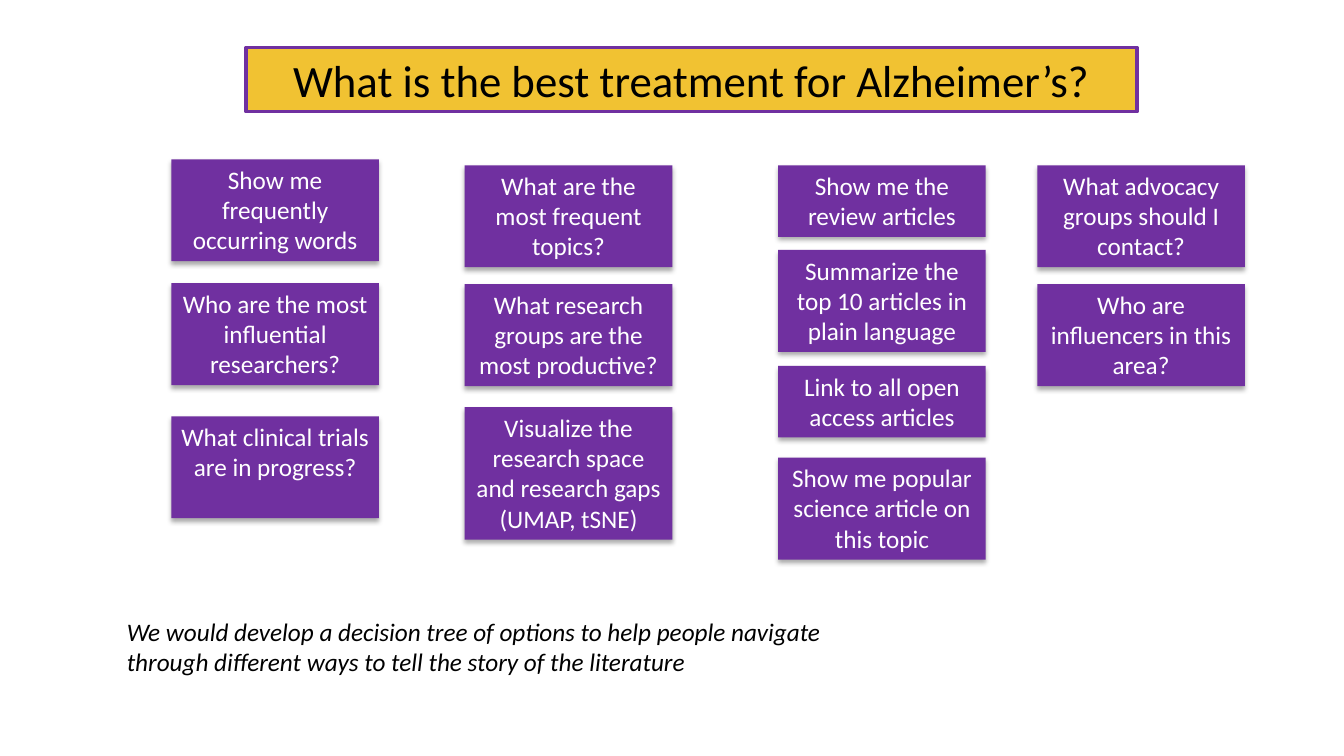
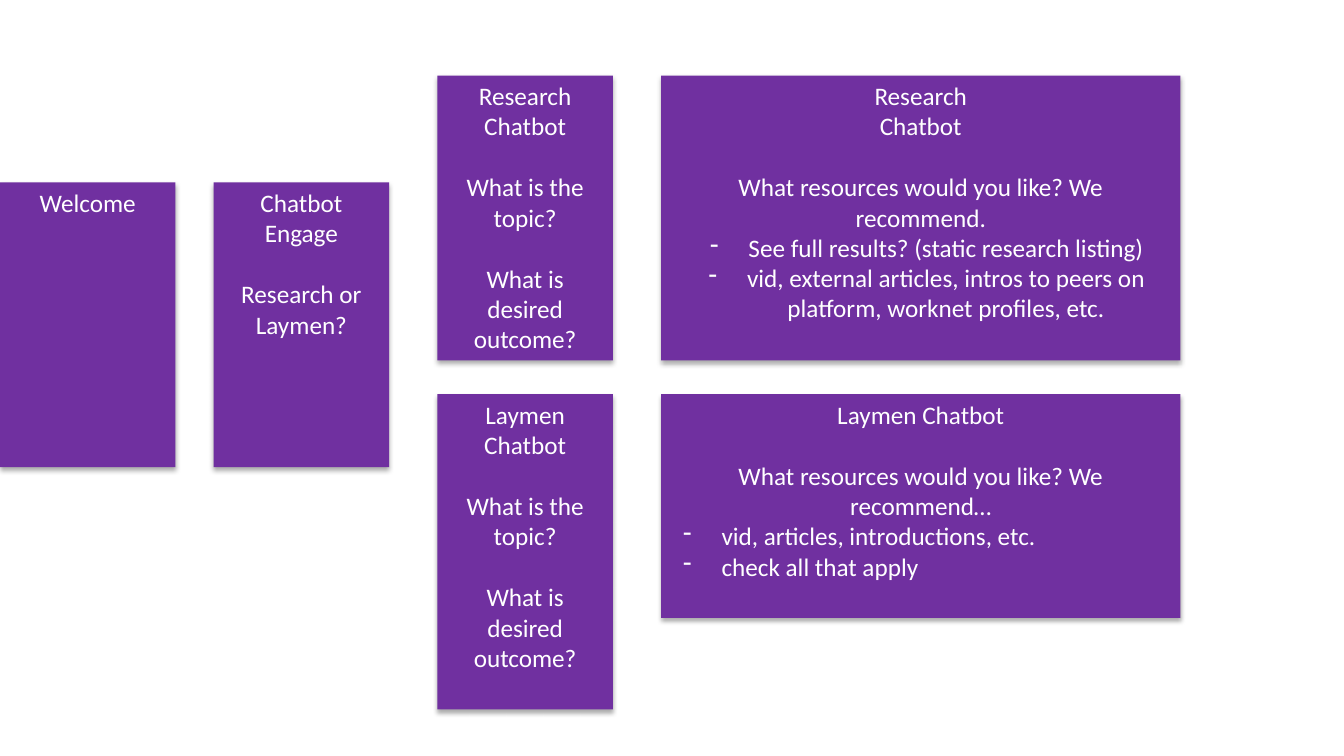
from dataclasses import dataclass, field

from lxml.etree import SubElement
from pptx import Presentation
from pptx.dml.color import RGBColor
from pptx.enum.shapes import MSO_SHAPE
from pptx.enum.text import MSO_ANCHOR, MSO_AUTO_SIZE, PP_ALIGN
from pptx.oxml.ns import qn
from pptx.util import Inches, Pt


@dataclass
class Theme:
    plum: RGBColor = RGBColor(0x70, 0x30, 0xA0)
    gold: RGBColor = RGBColor(0xF1, 0xC2, 0x32)
    ink: RGBColor = RGBColor(0, 0, 0)
    paper: RGBColor = RGBColor(255, 255, 255)
    edge: int = Pt(2.25)
    line: float = 4.03
    pad: float = 1.4
    head: dict = field(default_factory=lambda: {"name": "Calibri", "size": Pt(32)})
    text: dict = field(default_factory=lambda: {"name": "Calibri", "size": Pt(18)})
    frame: dict = field(default_factory=lambda: {
        "word_wrap": True, "auto_size": MSO_AUTO_SIZE.NONE,
        "vertical_anchor": MSO_ANCHOR.TOP,
        "margin_left": Inches(0.1), "margin_right": Inches(0.1),
        "margin_top": Inches(0.05), "margin_bottom": Inches(0.05)})


THEME = Theme()
WIDTH, HEIGHT = Inches(13.333), Inches(7.5)
MID = {"alignment": PP_ALIGN.CENTER, "space_before": Pt(0)}
GAP = MID | {"space_before": Pt(22)}
LEFT = MID | {"alignment": PP_ALIGN.LEFT}


def apply(item, form):
    for name, value in form.items():
        setattr(item, name, value)


def area(x, y, w, h):
    return [round(size * part / 100)
            for size, part in zip((WIDTH, HEIGHT, WIDTH, HEIGHT), (x, y, w, h))]


def tall(lines):
    return lines * THEME.line + THEME.pad


def dash(para):
    props = para._p.get_or_add_pPr()
    props.set("marL", str(Inches(0.5)))
    props.set("indent", str(Inches(-0.38)))
    tint = SubElement(props, qn("a:buClr"))
    SubElement(tint, qn("a:srgbClr"), val=str(THEME.paper))
    SubElement(props, qn("a:buChar"), char="-")


def write(shape, rows, font, color, **frame):
    body = shape.text_frame
    apply(body, THEME.frame | frame)
    for spot, (text, form, mark) in enumerate(rows):
        para = body.add_paragraph() if spot else body.paragraphs[0]
        apply(para, form)
        if mark:
            dash(para)
        run = para.add_run()
        run.text = text
        apply(run.font, font)
        run.font.color.rgb = color


def shade(shape):
    shape.shadow.inherit = False
    cast = SubElement(shape._element.spPr.find(qn("a:effectLst")), qn("a:outerShdw"),
                      blurRad=str(Pt(3.5)), dist=str(Pt(2.2)), dir="5400000",
                      rotWithShape="0")
    tint = SubElement(cast, qn("a:srgbClr"), val=str(THEME.ink))
    SubElement(tint, qn("a:alpha"), val="32000")


def card(slide, x, y, w, lines, rows):
    shape = slide.shapes.add_shape(MSO_SHAPE.RECTANGLE, *area(x, y, w, tall(lines)))
    shape.fill.solid()
    shape.fill.fore_color.rgb = THEME.plum
    shape.line.fill.background()
    shade(shape)
    write(shape, rows, THEME.text, THEME.paper)


def title(slide, text, *box):
    shape = slide.shapes.title
    apply(shape, dict(zip(("left", "top", "width", "height"), area(*box))))
    shape.fill.solid()
    shape.fill.fore_color.rgb = THEME.gold
    shape.line.color.rgb = THEME.plum
    shape.line.width = THEME.edge
    write(shape, [(text, MID, False)], THEME.head, THEME.ink)


def note(slide, text, *box):
    shape = slide.shapes.add_textbox(*area(*box))
    write(shape, [(text, LEFT, False)], THEME.text | {"italic": True}, THEME.ink,
          margin_top=Inches(0.1), margin_bottom=Inches(0.1))


def asks(deck):
    slide = deck.slides.add_slide(deck.slide_layouts[5])
    title(slide, "What is the best treatment for Alzheimer’s?", 18.3, 6.27, 66.3, 8.53)
    stacks = {
        12.75: [(21.07, 3, "Show me frequently occurring words"),
                (37.47, 3, "Who are the most influential researchers?"),
                (55.07, 3, "What clinical trials are in progress?")],
        34.58: [(21.87, 3, "What are the most frequent topics?"),
                (37.6, 3, "What research groups are the most productive?"),
                (53.87, 4, "Visualize the research space and research gaps",
                 "(UMAP, tSNE)")],
        57.9: [(21.87, 2, "Show me the review articles"),
               (33.07, 3, "Summarize the top 10 articles in plain language"),
               (48.4, 2, "Link to all open access articles"),
               (60.53, 3, "Show me popular science article on this topic")],
        77.18: [(21.87, 3, "What advocacy groups should I contact?"),
                (37.6, 3, "Who are influencers in this area?")],
    }
    for x, stack in stacks.items():
        for y, lines, *texts in stack:
            card(slide, x, y, 15.45, lines, [(text, MID, False) for text in texts])
    note(slide, "We would develop a decision tree of options to help people navigate "
         "through different ways to tell the story of the literature",
         8.7, 80.13, 57.38, 10.8)


def flow(deck):
    slide = deck.slides.add_slide(deck.slide_layouts[6])
    slim, wide = 13.05, 38.63
    high, mid, low = 10, 24.13, 52.13
    card(slide, 0, mid, slim, 9, [("Welcome", MID, False)])
    card(slide, 15.9, mid, slim, 9, [("Chatbot Engage", MID, False),
                                     ("Research or Laymen?", GAP, False)])
    for name, y, lines in (("Research", high, 9), ("Laymen", low, 10)):
        card(slide, 32.55, y, slim, lines, [(f"{name} Chatbot", MID, False),
                                            ("What is the topic?", GAP, False),
                                            ("What is desired outcome?", GAP, False)])
    offer = "What resources would you like? We recommend"
    card(slide, 49.2, high, wide, 9, [
        ("Research", MID, False), ("Chatbot", MID, False),
        (f"{offer}.", GAP, False),
        ("See full results? (static research listing)", MID, True),
        ("vid, external articles, intros to peers on platform, "
         "worknet profiles, etc.", MID, True)])
    card(slide, 49.2, low, wide, 7, [
        ("Laymen Chatbot", MID, False),
        (f"{offer}…", GAP, False),
        ("vid, articles, introductions, etc.", LEFT, True),
        ("check all that apply", LEFT, True)])


def main():
    deck = Presentation()
    apply(deck, {"slide_width": WIDTH, "slide_height": HEIGHT})
    asks(deck)
    flow(deck)
    deck.save("out.pptx")


if __name__ == "__main__":
    main()
